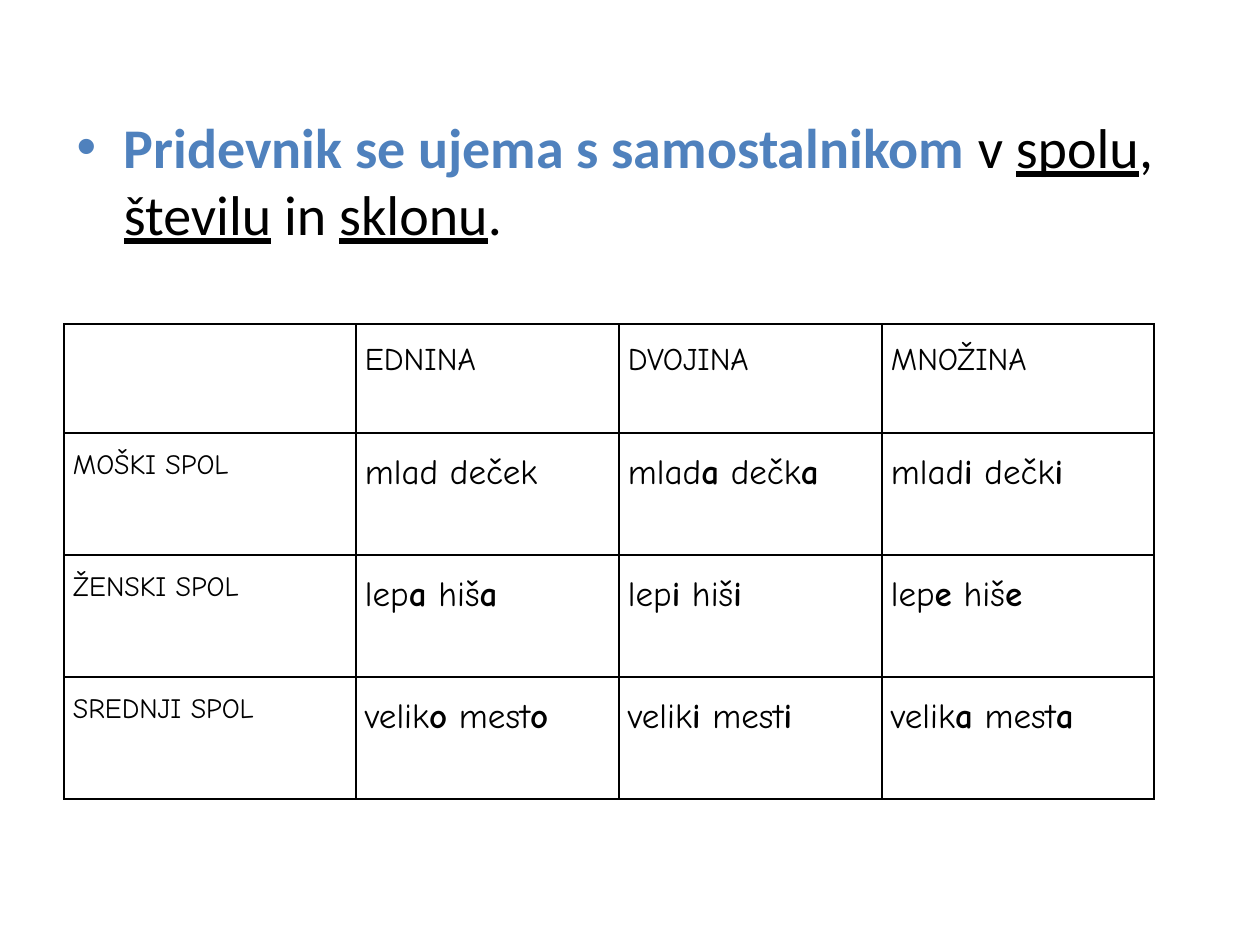
"""Build a slide on how adjectives agree with nouns, with a table of endings."""
from lxml import etree
from pptx import Presentation
from pptx.dml.color import RGBColor
from pptx.oxml.ns import qn
from pptx.util import Pt

RULE_LEAD = "Pridevnik se ujema s samostalnikom"
RULE_REST = " v *spolu*, *številu* in *sklonu*."
ROWS = [
    ["", "EDNINA", "DVOJINA", "MNOŽINA"],
    ["MOŠKI SPOL", "mlad deček", "mlad*a* dečk*a*", "mlad*i* dečk*i*"],
    ["ŽENSKI SPOL", "lep*a* hiš*a*", "lep*i* hiš*i*", "lep*e* hiš*e*"],
    ["SREDNJI SPOL", "velik*o* mest*o*", "velik*i* mest*i*", "velik*a* mest*a*"],
]
COLUMN_WIDTHS = [292, 263, 263, 272]
ROW_HEIGHTS = [109, 122, 122, 122]
HEADER_SIZE, LABEL_SIZE, EXAMPLE_SIZE = 18, 16, 20
BLACK, BLUE = "000000", "4F81BD"


def px(value):
    return round(value * 914400 / 126)


def color(value):
    return RGBColor.from_string(value)


def add_run(paragraph, text, font_name, size, text_color=BLACK):
    run = paragraph.add_run()
    run.text = text
    run.font.name = font_name
    run.font.size = Pt(size)
    run.font.color.rgb = color(text_color)
    return run


def add_marked(paragraph, text, font_name, size, emphasis):
    for index, piece in enumerate(text.split("*")):
        if piece:
            run = add_run(paragraph, piece, font_name, size)
            setattr(run.font, emphasis, index % 2 == 1)


def add_borders(cell):
    properties = cell._tc.get_or_add_tcPr()
    for side in ("a:lnL", "a:lnR", "a:lnT", "a:lnB"):
        line = etree.SubElement(properties, qn(side), w=str(Pt(1)))
        fill = etree.SubElement(line, qn("a:solidFill"))
        etree.SubElement(fill, qn("a:srgbClr"), val=BLACK)


def add_rule(slide):
    body = slide.placeholders[1]
    body.left, body.top, body.width, body.height = map(px, (64, 106, 1134, 624))
    paragraph = body.text_frame.paragraphs[0]
    add_run(paragraph, RULE_LEAD, "Calibri", 32, BLUE).font.bold = True
    add_marked(paragraph, RULE_REST, "Calibri", 32, "underline")


def add_endings_table(slide):
    frame = slide.shapes.add_table(
        len(ROWS), len(COLUMN_WIDTHS), px(64), px(324),
        px(sum(COLUMN_WIDTHS)), px(sum(ROW_HEIGHTS)))
    table = frame.table
    table.first_row = table.horz_banding = False
    for column, width in zip(table.columns, COLUMN_WIDTHS):
        column.width = px(width)
    for row, height in zip(table.rows, ROW_HEIGHTS):
        row.height = px(height)
    for row_index, texts in enumerate(ROWS):
        for column_index, text in enumerate(texts):
            cell = table.cell(row_index, column_index)
            cell.margin_left = cell.margin_right = px(9)
            cell.margin_top = cell.margin_bottom = 0
            add_borders(cell)
            cell.fill.background()
            size = (HEADER_SIZE if row_index == 0
                    else LABEL_SIZE if column_index == 0 else EXAMPLE_SIZE)
            paragraph = cell.text_frame.paragraphs[0]
            paragraph.line_spacing = 1.5
            add_marked(paragraph, text, "Comic Neue", size, "bold")


def main():
    presentation = Presentation()
    presentation.slide_width, presentation.slide_height = px(1260), px(945)
    slide = presentation.slides.add_slide(presentation.slide_layouts[1])
    title = slide.shapes.title.element
    title.getparent().remove(title)
    add_rule(slide)
    add_endings_table(slide)
    presentation.save("out.pptx")


if __name__ == "__main__":
    main()
